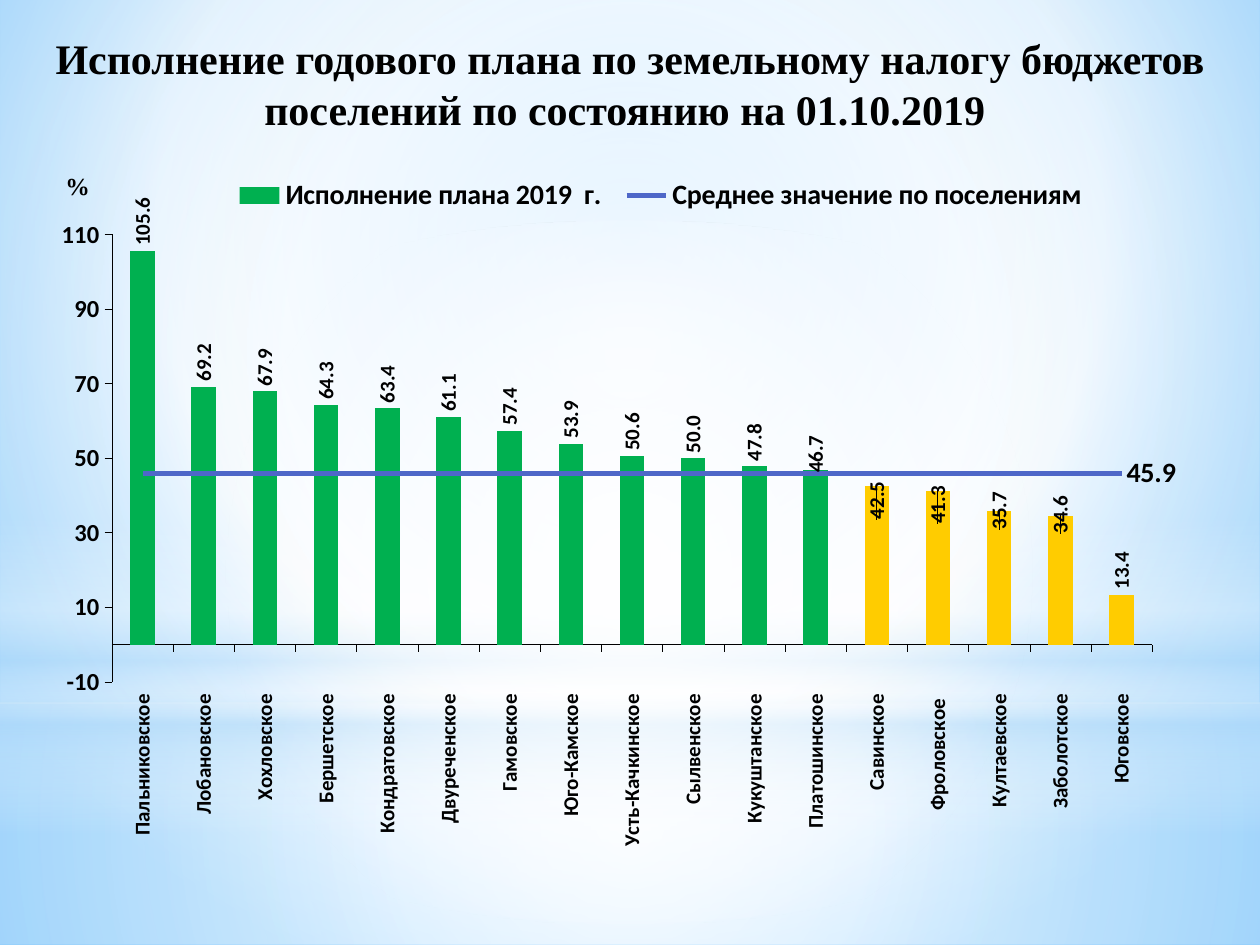
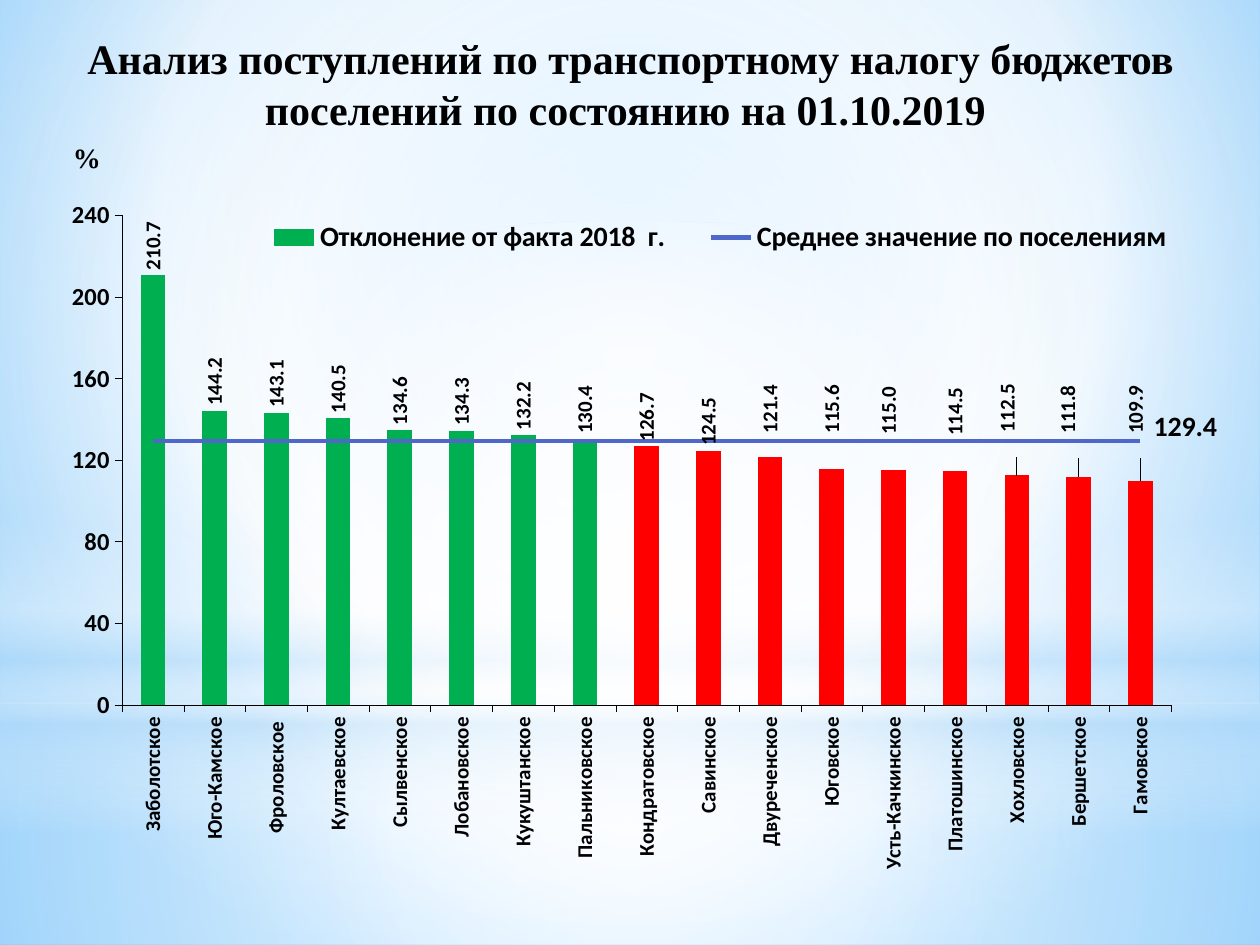
"""Builds two slides with charts of land and transport tax receipts by settlement."""
from copy import deepcopy
from lxml import etree
from pptx import Presentation
from pptx.chart.data import CategoryChartData
from pptx.dml.color import RGBColor
from pptx.enum.chart import XL_CHART_TYPE as ChartType
from pptx.enum.chart import XL_LABEL_POSITION as LabelPosition
from pptx.enum.chart import XL_LEGEND_POSITION as LegendPosition
from pptx.enum.chart import XL_MARKER_STYLE as MarkerStyle
from pptx.enum.chart import XL_TICK_LABEL_POSITION as TickLabels
from pptx.enum.chart import XL_TICK_MARK as TickMark
from pptx.enum.shapes import MSO_SHAPE as Shape
from pptx.enum.text import MSO_ANCHOR as Anchor
from pptx.enum.text import MSO_AUTO_SIZE as AutoSize
from pptx.enum.text import PP_ALIGN as Align
from pptx.oxml import parse_xml
from pptx.oxml.ns import nsdecls, qn
from pptx.util import Inches, Pt

BLACK = RGBColor(0x00, 0x00, 0x00)
GREEN = RGBColor(0x00, 0xB0, 0x50)
YELLOW = RGBColor(0xFF, 0xCC, 0x00)
RED = RGBColor(0xFF, 0x00, 0x00)
AVERAGE_BLUE = RGBColor(0x4E, 0x67, 0xC8)
TITLE_FONT = "Times New Roman"
CHART_FONT = "Calibri"
AVERAGE_NAME = "Среднее значение по поселениям"
CENTRE = (50, 50, 50, 50)


def gradient(stops, focus=None):
    """Return a gradient fill: radial around focus, or vertical without one."""
    colours = "".join(
        f'<a:gs pos="{place * 1000}"><a:srgbClr val="{colour}">'
        f'<a:alpha val="{opacity * 1000}"/></a:srgbClr></a:gs>'
        for place, colour, opacity in stops)
    if focus:
        left, top, right, bottom = (side * 1000 for side in focus)
        direction = (f'<a:path path="circle"><a:fillToRect l="{left}" t="{top}" '
                     f'r="{right}" b="{bottom}"/></a:path>')
    else:
        direction = '<a:lin ang="5400000" scaled="0"/>'
    return parse_xml(f'<a:gradFill {nsdecls("a")} rotWithShape="1">'
                     f'<a:gsLst>{colours}</a:gsLst>{direction}</a:gradFill>')


def place(parent, index, x, y, width=None, height=None, target=None):
    """Insert a manual chart layout at the given child index."""
    for old in parent.findall(qn("c:layout")):
        parent.remove(old)
    layout = etree.Element(qn("c:layout"))
    manual = etree.SubElement(layout, qn("c:manualLayout"))
    values = [("layoutTarget", target)]
    if width:
        values += [("xMode", "edge"), ("yMode", "edge")]
    values += [("x", x), ("y", y), ("w", width), ("h", height)]
    for name, value in values:
        if value is not None:
            etree.SubElement(manual, qn(f"c:{name}")).set("val", str(value))
    parent.insert(index, layout)


BACKDROP = [
    (Shape.RECTANGLE, 5.58, 1.92,
     [(0, "FFFFFF", 91), (37, "FFFFFF", 76), (100, "B4DCFA", 79)], CENTRE),
    (Shape.RECTANGLE, 0, 5.58,
     [(0, "FFFFFF", 89), (48, "FFFFFF", 62), (100, "B4DCFA", 79)], CENTRE),
    (Shape.RECTANGLE, 4.12, 2.5,
     [(0, "FFFFFF", 0), (29, "FFFFFF", 30), (45, "B4DCFA", 40),
      (55, "FFFFFF", 26), (65, "B4DCFA", 60), (100, "FFFFFF", 0)], None),
    (Shape.OVAL, 1.75, 5.58, [(0, "FFFFFF", 100), (56, "FFFFFF", 0)], CENTRE),
]

SLIDES = [
    dict(
        title="Исполнение годового плана по земельному налогу бюджетов "
              "поселений по состоянию на 01.10.2019 ",
        title_left=0, title_width=10, chart_width=9.49,
        series="Исполнение плана 2019  г. ", average=45.9,
        rows=[("Пальниковское", 105.6), ("Лобановское", 69.2), ("Хохловское", 67.9),
              ("Бершетское", 64.3), ("Кондратовское", 63.4), ("Двуреченское", 61.1),
              ("Гамовское", 57.4), ("Юго-Камское", 53.9), ("Усть-Качкинское", 50.6),
              ("Сылвенское", 50), ("Кукуштанское", 47.8), ("Платошинское", 46.7),
              ("Савинское", 42.5), ("Фроловское ", 41.3), ("Култаевское", 35.7),
              ("Заболотское", 34.6), ("Юговское", 13.4)],
        low_colour=YELLOW, scale=(-10, 110, 20),
        plot=(0.061, 0.091, 0.87, 0.586), legend=(0.16, 0.01, 0.72, 0.06),
        legend_side=LegendPosition.BOTTOM,
        shifts={11: (0, 0.01), 12: (0, 0.05), 13: (0, 0.05), 14: (0, 0.03),
                15: (0, 0.03)},
        average_shift=None, unit_box=(0.42, 1.31, 0.48, 0.34), unit_size=14),
    dict(
        title="Анализ поступлений по транспортному налогу бюджетов "
              "поселений по состоянию на 01.10.2019 ",
        title_left=0.28, title_width=9.45, chart_width=9.57,
        series="Отклонение от факта 2018  г. ", average=129.4,
        rows=[("Заболотское", 210.7), ("Юго-Камское", 144.2), ("Фроловское ", 143.1),
              ("Култаевское", 140.5), ("Сылвенское", 134.6), ("Лобановское", 134.3),
              ("Кукуштанское", 132.2), ("Пальниковское", 130.4),
              ("Кондратовское", 126.7), ("Савинское", 124.5), ("Двуреченское", 121.4),
              ("Юговское", 115.6), ("Усть-Качкинское", 115), ("Платошинское", 114.5),
              ("Хохловское", 112.5), ("Бершетское", 111.8), ("Гамовское", 109.9)],
        low_colour=RED, scale=(0, 240, 40),
        plot=(0.069, 0.066, 0.87, 0.641), legend=(0.17, 0.06, 0.79, 0.07),
        legend_side=LegendPosition.TOP,
        shifts={10: (0, -0.025), 11: (0, -0.04), 12: (-0.004, -0.04),
                13: (0, -0.04), 14: (-0.008, -0.05), 15: (-0.009, -0.05),
                16: (-0.004, -0.055)},
        average_shift=(0.007, -0.018), unit_box=(0.48, 1.07, 0.51, 0.37),
        unit_size=16),
]

deck = Presentation()
deck.slide_width, deck.slide_height = Inches(10), Inches(7.5)
layout = deck.slide_layouts[5]
master = deck.slide_master
pages = [deck.slides.add_slide(layout) for _ in SLIDES]

master.background.fill.solid()
sky = master.background.fill._xPr
sky.replace(sky.find(qn("a:solidFill")), gradient(
    [(0, "9ED5FF", 100), (60, "FFFFFF", 100), (100, "5BB9FF", 100)], (20, 10, 20, 60)))
for index, (preset, top, height, stops, focus) in enumerate(BACKDROP):
    glow = pages[0].shapes.add_shape(
        preset, Inches(0), Inches(top), Inches(10), Inches(height))
    glow.shadow.inherit = False
    glow.line.fill.background()
    glow.fill.solid()
    properties = glow._element.spPr
    properties.replace(properties.find(qn("a:solidFill")), gradient(stops, focus))
    master.shapes._spTree.insert(2 + index, glow._element)

for page, content in zip(pages, SLIDES):
    title = page.shapes.title
    title.left, title.top = Inches(content["title_left"]), Inches(0.21)
    title.width, title.height = Inches(content["title_width"]), Inches(0.54)
    frame = title.text_frame
    frame.text = content["title"]
    frame.word_wrap = True
    frame.auto_size = AutoSize.NONE
    frame.vertical_anchor = Anchor.TOP
    frame.paragraphs[0].alignment = Align.CENTER

    data = CategoryChartData(number_format="#,##0.0")
    names, values = zip(*content["rows"])
    data.categories = names
    data.add_series(content["series"], values)
    data.add_series(AVERAGE_NAME, [content["average"]] * len(values))
    chart = page.shapes.add_chart(
        ChartType.COLUMN_CLUSTERED, Inches(0.31), Inches(1.31),
        Inches(content["chart_width"]), Inches(6.06), data).chart
    chart.has_title = False
    chart.font.name, chart.font.size, chart.font.bold = CHART_FONT, Pt(18), True
    chart.font.color.rgb = BLACK

    columns = chart.plots[0]
    columns.gap_width = 150
    columns.vary_by_categories = False
    bar_chart = columns._element
    average_element = bar_chart.findall(qn("c:ser"))[1]
    for bar_setting in average_element.findall(qn("c:invertIfNegative")):
        average_element.remove(bar_setting)
    line_chart = parse_xml(
        f'<c:lineChart {nsdecls("c")}><c:grouping val="standard"/>'
        '<c:varyColors val="0"/><c:marker val="1"/></c:lineChart>')
    line_chart.insert(2, average_element)
    line_chart.extend([deepcopy(axis) for axis in bar_chart.findall(qn("c:axId"))])
    bar_chart.addnext(line_chart)
    place(bar_chart.getparent(), 0, *content["plot"], target="inner")

    bars = chart.plots[0].series[0]
    bars.format.fill.solid()
    bars.format.fill.fore_color.rgb = GREEN
    for index, value in enumerate(values):
        if value < content["average"]:
            fill = bars.points[index].format.fill
            fill.solid()
            fill.fore_color.rgb = content["low_colour"]

    average = chart.plots[1].series[0]
    average.smooth = False
    average.marker.style = MarkerStyle.NONE
    average.format.line.color.rgb = AVERAGE_BLUE
    average.format.line.width = Pt(2.5)
    average_label = average.points[len(values) - 1].data_label
    average_label.position = LabelPosition.RIGHT
    average.data_labels.show_value = False
    if content["average_shift"]:
        place(average_label._get_or_add_dLbl(), 1, *content["average_shift"])

    bar_labels = bars.data_labels
    bar_labels.show_value = True
    bar_labels.number_format = "#,##0.0"
    bar_labels.number_format_is_linked = False
    moved_labels = [bars.points[index].data_label for index in content["shifts"]]
    for label in [bar_labels, *moved_labels]:
        label.position = LabelPosition.OUTSIDE_END
    for label, shift in zip(moved_labels, content["shifts"].values()):
        place(label._get_or_add_dLbl(), 1, *shift)

    category_axis, value_axis = chart.category_axis, chart.value_axis
    category_axis.tick_label_position = TickLabels.LOW
    value_axis.has_major_gridlines = False
    value_axis.minimum_scale, value_axis.maximum_scale, value_axis.major_unit = content["scale"]
    value_axis.tick_labels.number_format = "0"
    value_axis.tick_labels.number_format_is_linked = False
    for axis in (category_axis, value_axis):
        axis.major_tick_mark = TickMark.OUTSIDE
        axis.minor_tick_mark = TickMark.NONE
        axis.format.line.color.rgb = BLACK
        axis.format.line.width = Pt(0.25)

    chart.has_legend = True
    legend = chart.legend
    legend.position = content["legend_side"]
    legend.include_in_layout = False
    place(legend._element, 1, *content["legend"])

    fonts = [(category_axis.tick_labels.font, 12), (value_axis.tick_labels.font, 14),
             (legend.font, 16), (average_label.font, 16)]
    fonts += [(label.font, 12) for label in [bar_labels, *moved_labels]]
    for font, size in fonts:
        font.name, font.size, font.bold = CHART_FONT, Pt(size), True
        font.color.rgb = BLACK
    upright = [category_axis._element.find(qn("c:txPr"))]
    upright += bars._element.find(qn("c:dLbls")).iter(qn("c:txPr"))
    for text in upright:
        body = text.find(qn("a:bodyPr"))
        body.set("rot", "-5400000")
        body.set("vert", "horz")

    unit = page.shapes.add_textbox(*(Inches(length) for length in content["unit_box"]))
    unit.text_frame.word_wrap = True
    unit.text_frame.text = "%"
    for box, size in ((title, 24), (unit, content["unit_size"])):
        span = box.text_frame.paragraphs[0].runs[0]
        span.font.name, span.font.size, span.font.bold = TITLE_FONT, Pt(size), True
        span.font.color.rgb = BLACK

deck.save("out.pptx")
